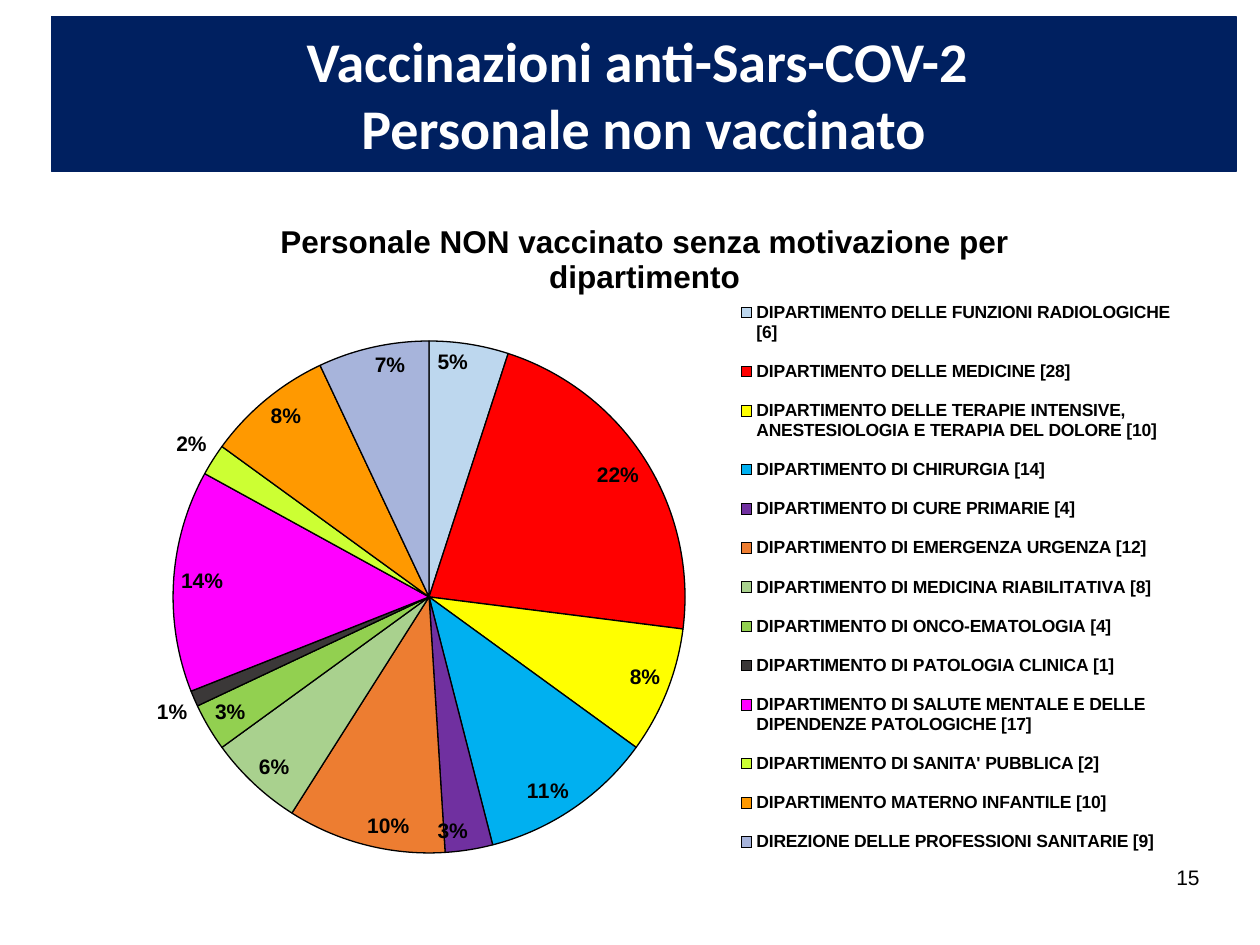
from lxml import etree
from pptx import Presentation
from pptx.chart.data import CategoryChartData
from pptx.dml.color import RGBColor
from pptx.enum.chart import XL_CHART_TYPE, XL_LABEL_POSITION, XL_LEGEND_POSITION
from pptx.enum.shapes import MSO_SHAPE
from pptx.enum.text import MSO_ANCHOR, PP_ALIGN
from pptx.oxml.ns import qn
from pptx.util import Pt

PIE = XL_CHART_TYPE.PIE
INSIDE, OUTSIDE = XL_LABEL_POSITION.INSIDE_END, XL_LABEL_POSITION.OUTSIDE_END
RIGHT = XL_LEGEND_POSITION.RIGHT
RECTANGLE = MSO_SHAPE.RECTANGLE
MIDDLE = MSO_ANCHOR.MIDDLE
CENTER, ALIGN_RIGHT = PP_ALIGN.CENTER, PP_ALIGN.RIGHT

HEADING = ["Vaccinazioni anti-Sars-COV-2 ", "Personale non vaccinato"]
CHART_TITLE = "Personale NON vaccinato senza motivazione per dipartimento"
PAGE_NUMBER = "15"
# department, share in percent, slice colour
DEPARTMENTS = [
    ("DIPARTIMENTO DELLE FUNZIONI RADIOLOGICHE [6]", 5, "BDD7EE"),
    ("DIPARTIMENTO DELLE MEDICINE [28]", 22, "FF0000"),
    ("DIPARTIMENTO DELLE TERAPIE INTENSIVE, ANESTESIOLOGIA E TERAPIA DEL DOLORE [10]", 8, "FFFF00"),
    ("DIPARTIMENTO DI CHIRURGIA [14]", 11, "00B0F0"),
    ("DIPARTIMENTO DI CURE PRIMARIE [4]", 3, "7030A0"),
    ("DIPARTIMENTO DI EMERGENZA URGENZA [12]", 10, "ED7D31"),
    ("DIPARTIMENTO DI MEDICINA RIABILITATIVA [8]", 6, "A9D18E"),
    ("DIPARTIMENTO DI ONCO-EMATOLOGIA [4]", 3, "92D050"),
    ("DIPARTIMENTO DI PATOLOGIA CLINICA [1]", 1, "3B3838"),
    ("DIPARTIMENTO DI SALUTE MENTALE E DELLE DIPENDENZE PATOLOGICHE [17]", 14, "FF00FF"),
    ("DIPARTIMENTO DI SANITA' PUBBLICA [2]", 2, "CCFF33"),
    ("DIPARTIMENTO MATERNO INFANTILE [10]", 8, "FF9900"),
    ("DIREZIONE DELLE PROFESSIONI SANITARIE [9]", 7, "A7B4DB"),
]
SMALLEST_INSIDE = 3  # slices below this share carry their label outside

# left, top, width, height in points
HEADING_BOX = (29.5, 9.4, 676.8, 88.6)
NUMBER_BOX = (530.6, 486.7, 162, 28.8)
CHART_BOX = (54, 105.8, 623.5, 408.2)
PIE_BOX = (98.9, 194.9, 292.6, 292.6)
LEGEND_BOX = (417, 162, 258, 336)
TITLE_CORNER = (157, 123)

HEADING_FONT = {"name": "Calibri", "size": Pt(32), "bold": True}
NUMBER_FONT = {"name": "Arial", "size": Pt(12), "bold": False}
TITLE_FONT = {"name": "Arial", "size": Pt(18), "bold": True}
LEGEND_FONT = {"name": "Arial", "size": Pt(10), "bold": True}
LABEL_FONT = {"name": "Arial", "size": Pt(12), "bold": True}


def rgb(value):
    return RGBColor.from_string(value)


def points(box):
    return [Pt(length) for length in box]


def style(font, formats, colour="000000"):
    for attribute, value in formats.items():
        setattr(font, attribute, value)
    font.color.rgb = rgb(colour)


def place(element, box, inner=False):
    """Fix a chart part at a slide position, as fractions of the chart."""
    for old in element.findall(qn("c:layout")):
        element.remove(old)
    layout = etree.Element(qn("c:layout"))
    manual = etree.SubElement(layout, qn("c:manualLayout"))
    settings = [("layoutTarget", "inner")] if inner else []
    settings += [("xMode", "edge"), ("yMode", "edge")]
    left, top, width, height = CHART_BOX
    fractions = [(box[0] - left) / width, (box[1] - top) / height]
    fractions += [length / whole for length, whole in zip(box[2:], (width, height))]
    settings += [(key, f"{share:.4f}") for key, share in zip("xywh", fractions)]
    for key, value in settings:
        etree.SubElement(manual, qn(f"c:{key}")).set("val", value)
    before = element.find(qn("c:legendPos"))
    if before is None:
        before = element.find(qn("c:tx"))
    if before is None:
        element.insert(0, layout)
    else:
        before.addnext(layout)


def add_heading(slide):
    banner = slide.shapes.add_shape(RECTANGLE, *points(HEADING_BOX))
    banner.shadow.inherit = False
    banner.fill.solid()
    banner.fill.fore_color.rgb = banner.line.color.rgb = rgb("002060")
    banner.line.width = Pt(1)
    frame = banner.text_frame
    frame.vertical_anchor = MIDDLE
    frame.text = "\n".join(HEADING)
    for paragraph in frame.paragraphs:
        paragraph.alignment = CENTER
        style(paragraph.runs[0].font, HEADING_FONT, "FFFFFF")


def add_page_number(slide):
    frame = slide.shapes.add_textbox(*points(NUMBER_BOX)).text_frame
    frame.word_wrap = True
    frame.vertical_anchor = MIDDLE
    frame.text = PAGE_NUMBER
    frame.paragraphs[0].alignment = ALIGN_RIGHT
    style(frame.paragraphs[0].runs[0].font, NUMBER_FONT)


def add_pie(slide):
    names, shares, colours = zip(*DEPARTMENTS)
    data = CategoryChartData()
    data.categories = names
    data.add_series("Series 1", shares)
    chart = slide.shapes.add_chart(PIE, *points(CHART_BOX), data).chart
    style(chart.font, LEGEND_FONT)

    title = chart.chart_title
    title.text_frame.text = CHART_TITLE
    style(title.text_frame.paragraphs[0].runs[0].font, TITLE_FONT)
    title.include_in_layout = False
    place(title._element, TITLE_CORNER)

    chart.has_legend = True
    chart.legend.position = RIGHT
    chart.legend.include_in_layout = False
    style(chart.legend.font, LEGEND_FONT)
    place(chart.legend._element, LEGEND_BOX)

    plot = chart.plots[0]
    plot.vary_by_categories = True
    place(plot._element.getparent(), PIE_BOX, inner=True)
    series = plot.series[0]
    labels = series.data_labels
    labels.show_percentage, labels.show_value = True, False
    labels.number_format, labels.number_format_is_linked = "0%", False
    labels.position = INSIDE
    style(labels.font, LABEL_FONT)

    for index, (share, colour) in enumerate(zip(shares, colours)):
        point = series.points[index]
        point.format.fill.solid()
        point.format.fill.fore_color.rgb = rgb(colour)
        point.format.line.color.rgb = rgb("000000")
        point.format.line.width = Pt(0.75)
        if share < SMALLEST_INSIDE:
            style(point.data_label.font, LABEL_FONT)
            point.data_label.position = OUTSIDE
    for label in series._element.iter(qn("c:dLbl")):
        label.find(qn("c:showVal")).set("val", "0")
        label.find(qn("c:showPercent")).set("val", "1")


def main():
    deck = Presentation()
    deck.slide_width, deck.slide_height = Pt(720), Pt(540)
    slide = deck.slides.add_slide(deck.slide_layouts[6])
    add_heading(slide)
    add_page_number(slide)
    add_pie(slide)
    deck.save("out.pptx")


if __name__ == "__main__":
    main()
